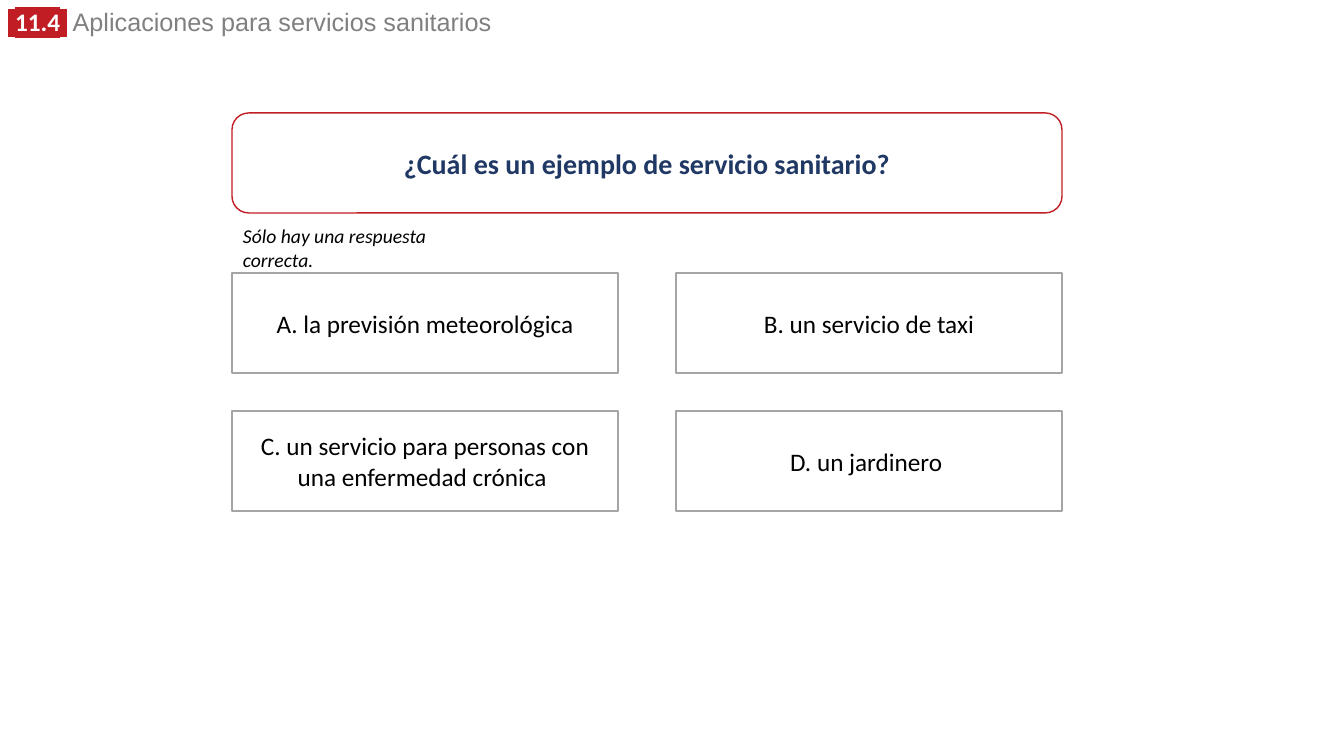
"""Build the quiz slide on health service applications."""
from dataclasses import dataclass

from lxml.etree import SubElement
from pptx import Presentation
from pptx.dml.color import RGBColor
from pptx.enum.shapes import MSO_SHAPE as Shape
from pptx.enum.text import MSO_ANCHOR as Anchor
from pptx.enum.text import MSO_AUTO_SIZE as AutoSize
from pptx.enum.text import PP_ALIGN as Align
from pptx.oxml.ns import qn
from pptx.util import Emu, Pt

EMU_PER_INCH = 914400
PX_PER_INCH = 100.8
COLORS = {
    "red": "C01E24",
    "navy": "203864",
    "gray": "808080",
    "border": "A5A5A5",
    "black": "000000",
    "white": "FFFFFF",
}
FORMATS = {
    "question": {"name": "Calibri", "size": Pt(20), "bold": True},
    "option": {"name": "Calibri", "size": Pt(18)},
    "hint": {"name": "Calibri", "size": Pt(14), "italic": True},
}
BOX_HEIGHT = 100
OPTION_WIDTH = 386
OPTION_LEFT, OPTION_TOP = 232, 273
COLUMN_STEP, ROW_STEP = 444, 138
OPTIONS = (
    "A. la previsión meteorológica",
    "B. un servicio de taxi",
    "C. un servicio para personas con una enfermedad crónica ",
    "D. un jardinero ",
)


@dataclass(frozen=True)
class Box:
    """A bordered box with centred text, measured in px."""

    text: str
    left: int
    top: int
    width: int
    kind: Shape = Shape.RECTANGLE
    border: str = "border"
    color: str = "black"
    style: str = "option"


@dataclass(frozen=True)
class TitleRun:
    """A stretch of title text with its own look."""

    text: str
    font: str = "Arial"
    color: str = "white"
    bold: bool = True
    highlight: str = ""


TITLE_RUNS = (
    TitleRun(" ", highlight="red"),
    TitleRun("11.4", font="Calibri", highlight="red"),
    TitleRun(" ", highlight="red"),
    TitleRun(" Aplicaciones para servicios sanitarios", color="gray", bold=False),
)


def px(value: int) -> Emu:
    """Turn px into EMU."""
    return Emu(round(value * EMU_PER_INCH / PX_PER_INCH))


def rgb(name: str) -> RGBColor:
    """Look up a named colour."""
    return RGBColor.from_string(COLORS[name])


def format_font(font, color: str, values: dict) -> None:
    """Set a font's colour and its format values."""
    font.color.rgb = rgb(color)
    for attribute, value in values.items():
        setattr(font, attribute, value)


def highlight_run(run, color: str) -> None:
    """Put a highlight colour behind a run."""
    properties = run.font._element
    highlight = SubElement(properties, qn("a:highlight"))
    SubElement(highlight, qn("a:srgbClr"), val=COLORS[color])
    properties.find(qn("a:solidFill")).addnext(highlight)


def fill_title(title) -> None:
    """Place the title placeholder and write its runs."""
    title.left, title.top, title.width, title.height = map(px, (-2, 7, 960, 35))
    frame = title.text_frame
    frame.word_wrap = True
    frame.auto_size = AutoSize.SHAPE_TO_FIT_TEXT
    frame.vertical_anchor = Anchor.TOP
    paragraph = frame.paragraphs[0]
    paragraph.alignment = Align.LEFT
    paragraph.line_spacing = 0.8
    for part in TITLE_RUNS:
        run = paragraph.add_run()
        run.text = part.text
        values = {"name": part.font, "size": Pt(18), "bold": part.bold}
        format_font(run.font, part.color, values)
        if part.highlight:
            highlight_run(run, part.highlight)


def add_box(slide, box: Box) -> None:
    """Draw one bordered box."""
    place = map(px, (box.left, box.top, box.width, BOX_HEIGHT))
    shape = slide.shapes.add_shape(box.kind, *place)
    shape.shadow.inherit = False
    shape.fill.solid()
    shape.fill.fore_color.rgb = rgb("white")
    shape.line.color.rgb = rgb(box.border)
    shape.line.width = Pt(1)
    frame = shape.text_frame
    frame.word_wrap = True
    frame.vertical_anchor = Anchor.MIDDLE
    paragraph = frame.paragraphs[0]
    paragraph.alignment = Align.CENTER
    run = paragraph.add_run()
    run.text = box.text
    format_font(run.font, box.color, FORMATS[box.style])


def add_hint(slide, text: str) -> None:
    """Write the hint between the question and the options."""
    shape = slide.shapes.add_textbox(*map(px, (233, 219, 238, 34)))
    shape.text_frame.word_wrap = True
    run = shape.text_frame.paragraphs[0].add_run()
    run.text = text
    format_font(run.font, "black", FORMATS["hint"])


def main() -> None:
    """Build and save the presentation."""
    presentation = Presentation()
    presentation.slide_width, presentation.slide_height = px(1344), px(756)
    slide = presentation.slides.add_slide(presentation.slide_layouts[5])
    fill_title(slide.shapes.title)
    question = Box(
        "¿Cuál es un ejemplo de servicio sanitario?",
        OPTION_LEFT,
        113,
        COLUMN_STEP + OPTION_WIDTH,
        Shape.ROUNDED_RECTANGLE,
        "red",
        "navy",
        "question",
    )
    add_box(slide, question)
    for index, text in enumerate(OPTIONS):
        row, column = divmod(index, 2)
        left = OPTION_LEFT + column * COLUMN_STEP
        add_box(slide, Box(text, left, OPTION_TOP + row * ROW_STEP, OPTION_WIDTH))
    add_hint(slide, "Sólo hay una respuesta correcta.")
    presentation.save("out.pptx")


if __name__ == "__main__":
    main()
